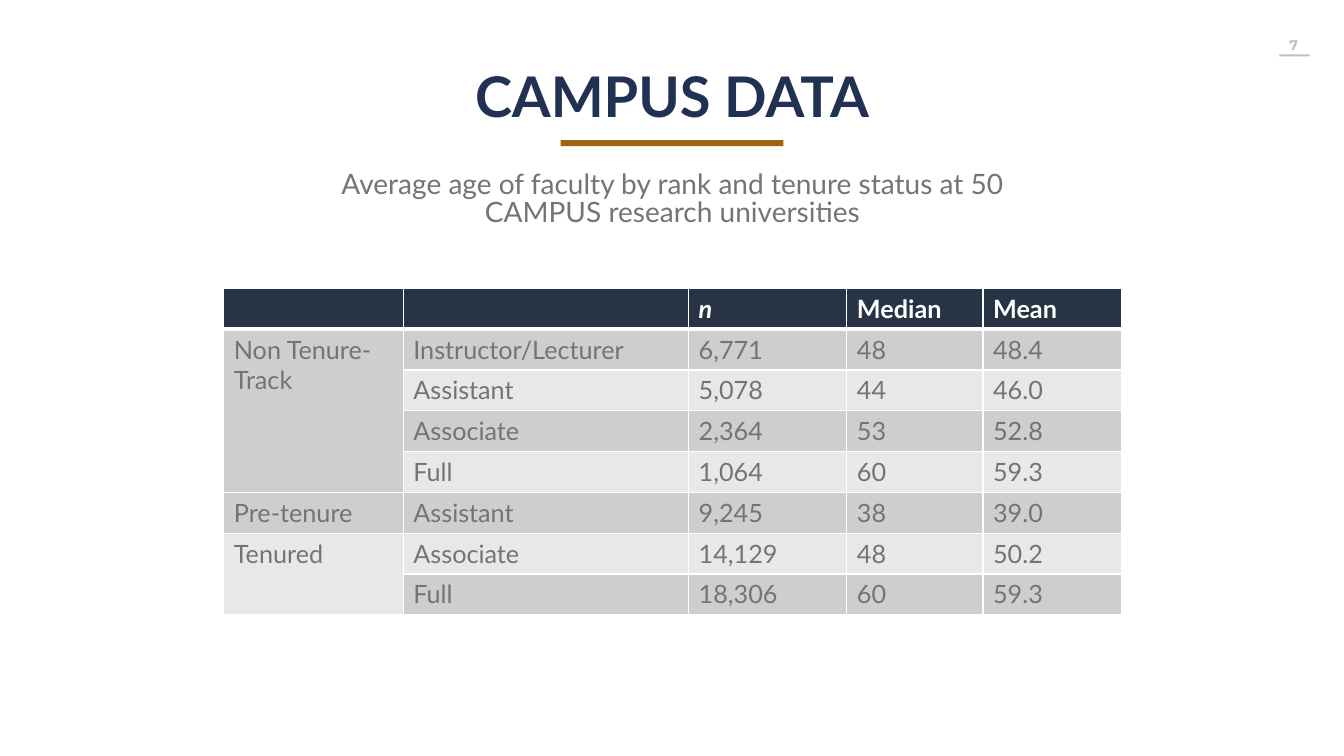
from dataclasses import dataclass

from lxml import etree
from pptx import Presentation
from pptx.dml.color import RGBColor
from pptx.enum.shapes import MSO_SHAPE
from pptx.enum.text import MSO_ANCHOR, MSO_AUTO_SIZE, PP_ALIGN
from pptx.oxml.ns import qn
from pptx.util import Inches, Pt

RECTANGLE = MSO_SHAPE.RECTANGLE
TOP = MSO_ANCHOR.TOP
NO_AUTOFIT = MSO_AUTO_SIZE.NONE
CENTER = PP_ALIGN.CENTER


@dataclass(frozen=True)
class Theme:
    font: str = "Lato"
    number_font: str = "Montserrat"
    navy: str = "213153"
    gold: str = "9C660F"
    gray: str = "737571"
    light_gray: str = "BFBFBF"
    header: str = "263445"
    bands: tuple = ("E8E8E9", "CDCECF")
    white: str = "FFFFFF"
    title_size: int = 40
    subtitle_size: int = 20
    table_size: int = 18
    number_size: int = 10
    thin_border: int = 1
    header_border: int = 3


class PageBuilder:
    def __init__(self, page, theme):
        self.page = page
        self.theme = theme

    def place(self, box, bounds):
        for name, length in zip(("left", "top", "width", "height"), bounds):
            setattr(box, name, Inches(length))

    def style(self, span, color, **values):
        values = {"name": self.theme.font, "bold": False, **values}
        for name, value in values.items():
            setattr(span.font, name, value)
        span.font.color.rgb = RGBColor.from_string(color)

    def fill_text(self, box, text, color, para_values=None, wrap=True, **values):
        frame = box.text_frame
        frame_values = {"word_wrap": wrap, "auto_size": NO_AUTOFIT, "vertical_anchor": TOP}
        for name, value in frame_values.items():
            setattr(frame, name, value)
        para = frame.paragraphs[0]
        para_values = {"alignment": CENTER, "space_before": Pt(0), **(para_values or {})}
        for name, value in para_values.items():
            setattr(para, name, value)
        span = para.add_run()
        span.text = text
        self.style(span, color, **values)

    def placeholder(self, index, bounds, text, color, **values):
        box = self.page.placeholders[index]
        self.place(box, bounds)
        self.fill_text(box, text, color, **values)

    def label(self, bounds, text, color, **values):
        box = self.page.shapes.add_textbox(*map(Inches, bounds))
        self.fill_text(box, text, color, **values)

    def bar(self, bounds, color):
        box = self.page.shapes.add_shape(RECTANGLE, *map(Inches, bounds))
        box.shadow.inherit = False
        box.fill.solid()
        box.fill.fore_color.rgb = RGBColor.from_string(color)
        box.line.fill.background()

    def border(self, cell, widths):
        properties = cell._tc.get_or_add_tcPr()
        for position, (side, width) in enumerate(widths.items()):
            line = etree.Element(qn(f"a:ln{side}"), w=str(Pt(width)))
            fill = etree.SubElement(line, qn("a:solidFill"))
            etree.SubElement(fill, qn("a:srgbClr"), val=self.theme.white)
            properties.insert(position, line)

    def table(self, bounds, column_widths, rows, merges):
        theme = self.theme
        frame = self.page.shapes.add_table(len(rows), len(column_widths), *map(Inches, bounds))
        table = frame.table
        for column, width in zip(table.columns, column_widths):
            column.width = Inches(width)
        for row_index, row in enumerate(rows):
            is_header = row_index == 0
            widths = dict.fromkeys("LRTB", theme.thin_border)
            if row_index < 2:
                widths["B" if is_header else "T"] = theme.header_border
            for column_index, text in enumerate(row):
                cell = table.cell(row_index, column_index)
                cell.fill.solid()
                fill = theme.header if is_header else theme.bands[row_index % 2]
                cell.fill.fore_color.rgb = RGBColor.from_string(fill)
                self.border(cell, widths)
                if text:
                    span = cell.text_frame.paragraphs[0].add_run()
                    span.text = text
                    color = theme.white if is_header else theme.gray
                    self.style(span, color, size=Pt(theme.table_size),
                               bold=is_header, italic=text == "n")
        for first, last in merges:
            table.cell(first, 0).merge(table.cell(last, 0))


def main():
    theme = Theme()
    deck = Presentation()
    deck.slide_width = Inches(13.33)
    deck.slide_height = Inches(7.5)
    builder = PageBuilder(deck.slides.add_slide(deck.slide_layouts[0]), theme)

    builder.label((12.59, 0.31, 0.48, 0.27), "7", theme.light_gray, wrap=False,
                  name=theme.number_font, size=Pt(theme.number_size), bold=True)
    builder.bar((12.69, 0.54, 0.3, 0.02), theme.light_gray)
    builder.placeholder(0, (4.54, 0.56, 4.25, 0.77), "CAMPUS DATA", theme.navy,
                        size=Pt(theme.title_size), bold=True)
    builder.bar((5.56, 1.39, 2.21, 0.06), theme.gold)
    builder.placeholder(
        1, (2.85, 1.65, 7.64, 0.66),
        "Average age of faculty by rank and tenure status at 50 CAMPUS research universities",
        theme.gray, para_values={"line_spacing": Pt(20.4)}, size=Pt(theme.subtitle_size))

    faculty_ages = [
        ("", "", "n", "Median", "Mean"),
        ("Non Tenure-Track", "Instructor/Lecturer", "6,771", "48", "48.4"),
        ("", "Assistant", "5,078", "44", "46.0"),
        ("", "Associate", "2,364", "53", "52.8"),
        ("", "Full", "1,064", "60", "59.3"),
        ("Pre-tenure", "Assistant", "9,245", "38", "39.0"),
        ("Tenured", "Associate", "14,129", "48", "50.2"),
        ("", "Full", "18,306", "60", "59.3"),
    ]
    builder.table((2.22, 2.86, 8.9, 3.24), (1.78, 2.83, 1.57, 1.35, 1.37),
                  faculty_ages, merges=((1, 4), (6, 7)))
    deck.save("out.pptx")


if __name__ == "__main__":
    main()
